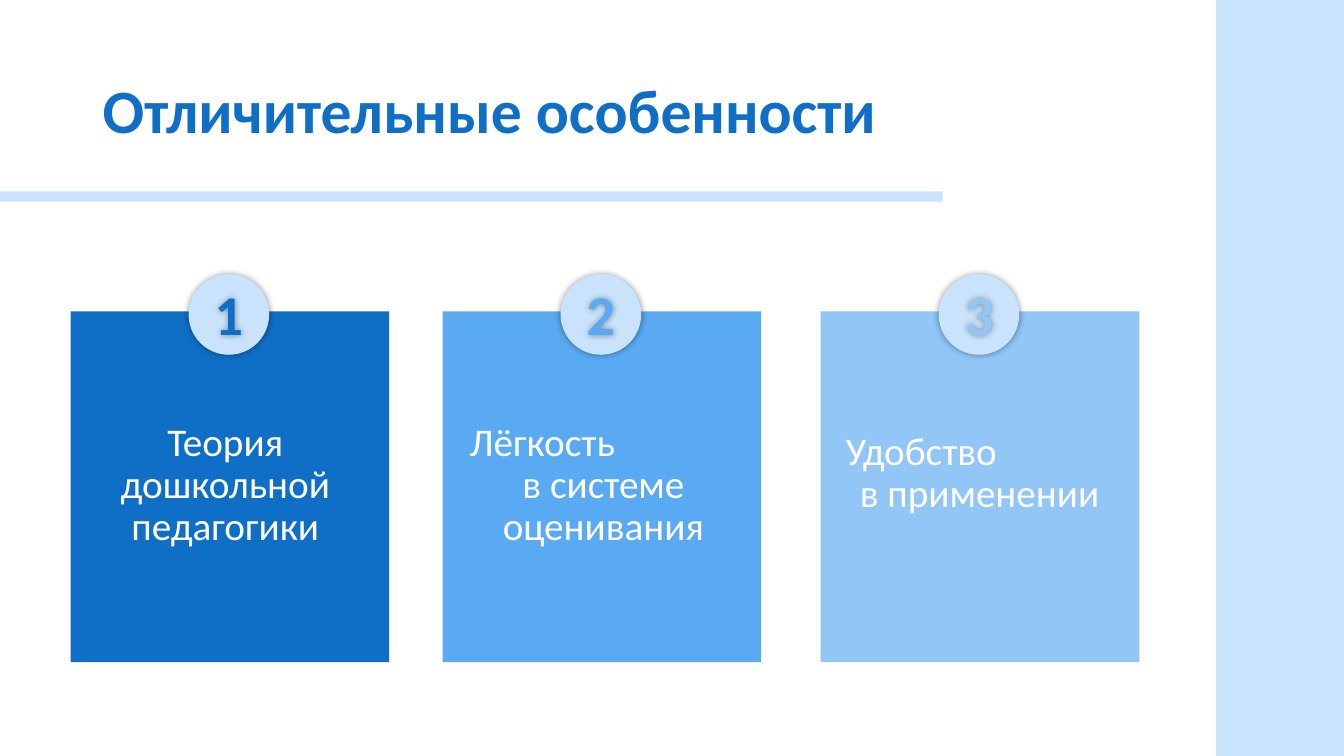
from lxml import etree
from pptx import Presentation
from pptx.dml.color import RGBColor
from pptx.enum.shapes import MSO_SHAPE
from pptx.enum.text import MSO_ANCHOR, PP_ALIGN
from pptx.oxml.ns import qn
from pptx.util import Inches, Pt

RECTANGLE, OVAL = MSO_SHAPE.RECTANGLE, MSO_SHAPE.OVAL
LEFT, CENTER = PP_ALIGN.LEFT, PP_ALIGN.CENTER
TOP, MIDDLE = MSO_ANCHOR.TOP, MSO_ANCHOR.MIDDLE

COLORS = {
    "dark": "0F6FC6",
    "medium": "59AAF2",
    "light": "91C6F7",
    "pale": "C8E3FB",
    "white": "FFFFFF",
    "shadow": "000000",
}

# Card left, caption left, caption top, colour, caption lines with alignment
CARDS = [
    (0.7, 0.7, 3.57, "dark", [("Теория дошкольной педагогики", CENTER)]),
    (4.39, 4.45, 3.57, "medium",
     [("Лёгкость", LEFT), ("в системе оценивания", CENTER)]),
    (8.14, 8.18, 3.66, "light",
     [("Удобство", LEFT), ("в применении", CENTER)]),
]


def add_block(slide, kind, left, top, width, height, color):
    block = slide.shapes.add_shape(
        kind, Inches(left), Inches(top), Inches(width), Inches(height))
    block.shadow.inherit = False
    block.fill.solid()
    block.fill.fore_color.rgb = RGBColor.from_string(COLORS[color])
    block.line.fill.background()
    return block


def add_text(slide, left, top, width, height, lines, size, color,
             bold=False, anchor=TOP, spacing=None, inset_top=0.05):
    box = slide.shapes.add_textbox(
        Inches(left), Inches(top), Inches(width), Inches(height))
    frame = box.text_frame
    frame.word_wrap = True
    frame.vertical_anchor = anchor
    frame.margin_top = Inches(inset_top)
    for index, (text, alignment) in enumerate(lines):
        paragraph = frame.add_paragraph() if index else frame.paragraphs[0]
        paragraph.text = text
        paragraph.alignment = alignment
        paragraph.line_spacing = spacing
        paragraph.font.name = "Calibri"
        paragraph.font.size = Pt(size)
        paragraph.font.bold = bold
        paragraph.font.color.rgb = RGBColor.from_string(COLORS[color])
    return box


def add_soft_shadow(shape):
    shape.shadow.inherit = False
    effects = shape.element.spPr.find(qn("a:effectLst"))
    shadow = etree.SubElement(effects, qn("a:outerShdw"), blurRad=str(Pt(5)),
                              dist="0", dir="0", rotWithShape="0")
    tint = etree.SubElement(shadow, qn("a:srgbClr"), val=COLORS["shadow"])
    etree.SubElement(tint, qn("a:alpha"), val="40000")


def add_card(slide, number, left, caption_left, caption_top, color, lines):
    add_block(slide, RECTANGLE, left, 3.09, 3.16, 3.48, color)
    caption = add_text(slide, caption_left, caption_top, 3.07, 2.92, lines,
                       28, "white", spacing=0.9, inset_top=0.62)
    # A left-aligned opening line stands slightly in from the edge
    for paragraph in caption.text_frame.paragraphs:
        if paragraph.alignment == LEFT:
            paragraph._p.get_or_add_pPr().set("marL", str(Inches(0.11)))

    # Numbered badge
    badge_left = left + 1.17
    badge = add_block(slide, OVAL, badge_left, 2.72, 0.8, 0.8, "pale")
    add_soft_shadow(badge)
    numeral = add_text(slide, badge_left, 2.72, 0.8, 0.77,
                       [(str(number), CENTER)], 40, color, bold=True)
    add_soft_shadow(numeral)


def main():
    prs = Presentation()
    prs.slide_width, prs.slide_height = Inches(13.33), Inches(7.5)
    slide = prs.slides.add_slide(prs.slide_layouts[6])

    # Side band and title rule
    add_block(slide, RECTANGLE, 12.06, 0, 1.27, 7.5, "pale")
    add_block(slide, RECTANGLE, 0, 1.9, 9.35, 0.1, "pale")

    # Title
    add_text(slide, 0.92, 0.4, 11.5, 1.45,
             [("Отличительные особенности", LEFT)], 44, "dark",
             bold=True, anchor=MIDDLE, spacing=0.9)

    # Cards
    for number, card in enumerate(CARDS, start=1):
        add_card(slide, number, *card)

    prs.save("out.pptx")


if __name__ == "__main__":
    main()
